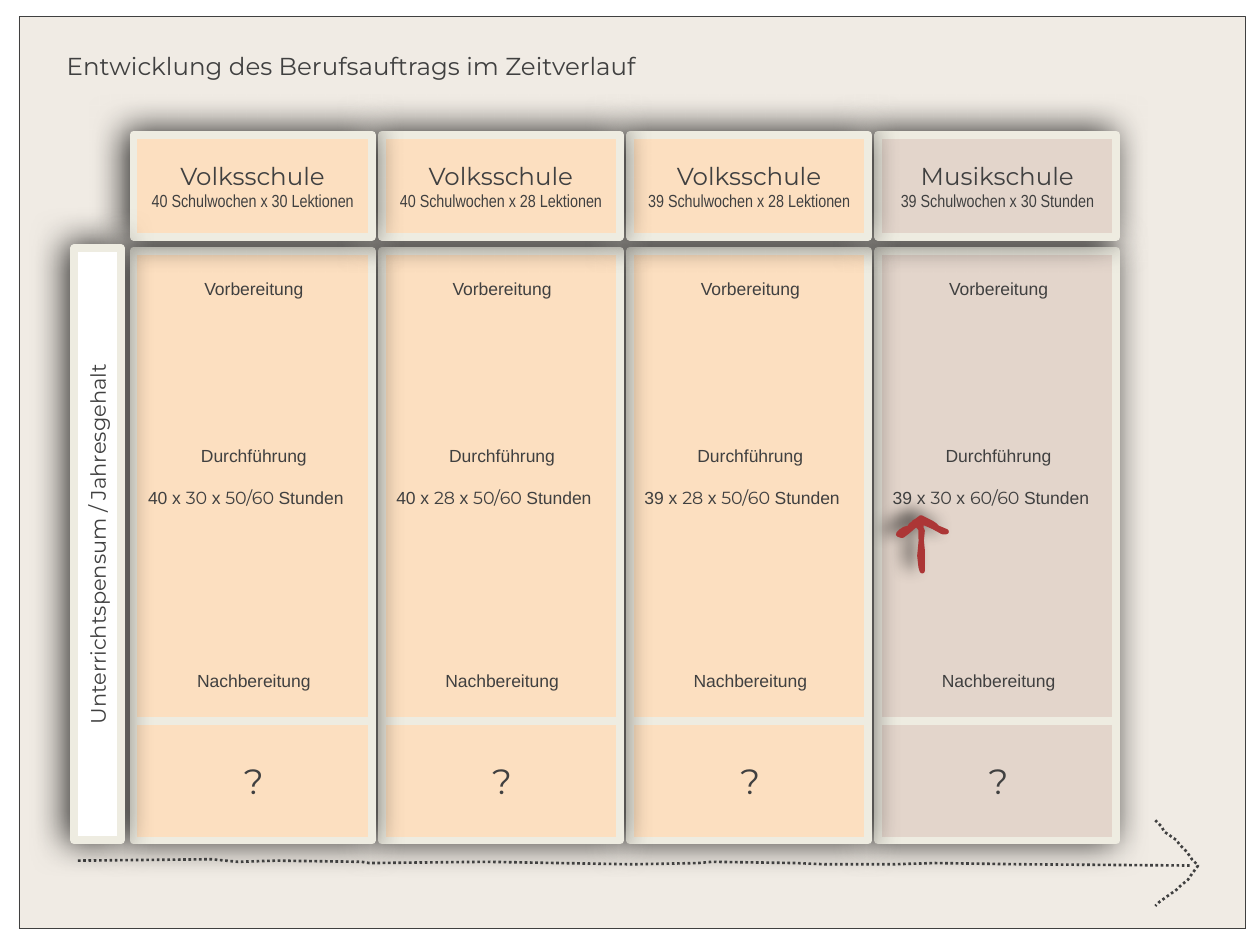
"""Build the slide on how the teaching assignment has developed over time."""
import pptx
import pptx.util
import pptx.dml.color
import pptx.enum.dml
import pptx.enum.shapes
import pptx.enum.text
import pptx.oxml
import pptx.oxml.ns

Pt = pptx.util.Pt
RGBColor = pptx.dml.color.RGBColor
ALIGN = pptx.enum.text.PP_ALIGN
DOTTED = pptx.enum.dml.MSO_LINE.ROUND_DOT
RECTANGLE = pptx.enum.shapes.MSO_SHAPE.RECTANGLE

INK = RGBColor(0x40, 0x40, 0x40)
PAPER = RGBColor(0xF0, 0xEB, 0xE4)
EDGE = RGBColor(0xEE, 0xEC, 0xE1)
PEACH = RGBColor(0xFC, 0xDF, 0xC0)
MAUVE = RGBColor(0xE3, 0xD5, 0xCB)
WHITE = RGBColor(0xFF, 0xFF, 0xFF)
RED = RGBColor(0xAC, 0x36, 0x36)


def style(shape, fill, line, dash=None, shadow=None):
    if fill is None:
        shape.fill.background()
    else:
        shape.fill.solid()
        shape.fill.fore_color.rgb = fill
    shape.line.color.rgb, width = line
    shape.line.width = Pt(width)
    if dash is not None:
        shape.line.dash_style = dash
    shape.shadow.inherit = False
    if shadow:
        blur, distance = shadow
        effects = shape._element.spPr.find(pptx.oxml.ns.qn("a:effectLst"))
        effects.append(pptx.oxml.parse_xml(
            f'<a:outerShdw {pptx.oxml.ns.nsdecls("a")} blurRad="{Pt(blur)}" '
            f'dist="{Pt(distance)}" dir="12000000" algn="ctr" rotWithShape="0">'
            '<a:srgbClr val="000000"><a:alpha val="80000"/></a:srgbClr></a:outerShdw>'))


def write(box, paragraphs, frame_format):
    frame = box.text_frame
    for name, value in {"word_wrap": True, **frame_format}.items():
        setattr(frame, name, value)
    for index, (para_format, spans) in enumerate(paragraphs):
        para = frame.add_paragraph() if index else frame.paragraphs[0]
        for name, value in para_format.items():
            setattr(para, name, value)
        for text, font, size in spans:
            span = para.add_run()
            span.text = text
            for name, value in {"name": font, "size": Pt(size)}.items():
                setattr(span.font, name, value)
            span.font.color.rgb = INK


CENTRED = {"alignment": ALIGN.CENTER}
LEFT = {"alignment": ALIGN.LEFT}
MIDDLE = {"vertical_anchor": pptx.enum.text.MSO_ANCHOR.MIDDLE}
GROW = {"auto_size": pptx.enum.text.MSO_AUTO_SIZE.SHAPE_TO_FIT_TEXT}
FRAME = (EDGE, 4.5)
SOFT = (20, 4)

deck = pptx.Presentation()
deck.slide_width, deck.slide_height = Pt(720), Pt(540)
page = deck.slides.add_slide(deck.slide_layouts[6])
shapes = page.shapes

backdrop = shapes.add_shape(RECTANGLE, Pt(10.8), Pt(9.4), Pt(700.6), Pt(521.3))
style(backdrop, PAPER, (INK, 0.25), DOTTED)

# school, weeks, lessons, unit, minutes, fill
columns = [
    ("Volksschule", 40, 30, "Lektionen", "50/60", PEACH),
    ("Volksschule", 40, 28, "Lektionen", "50/60", PEACH),
    ("Volksschule", 39, 28, "Lektionen", "50/60", PEACH),
    ("Musikschule", 39, 30, "Stunden", "60/60", MAUVE),
]
FIRST_LEFT, PITCH, WIDTH = 76.3, 141.85, 136.1
placed = [(FIRST_LEFT + PITCH * index, column) for index, column in enumerate(columns)]
placed.reverse()

for left, (school, weeks, lessons, unit, minutes, fill) in placed:
    body = shapes.add_shape(RECTANGLE, Pt(left), Pt(143.3), Pt(WIDTH), Pt(337))
    style(body, fill, FRAME, shadow=SOFT)
    formula = [(f"{weeks} x ", "Arial", 10), (f"{lessons} ", "Montserrat", 10),
               ("x ", "Arial", 10), (f"{minutes} ", "Montserrat", 10),
               ("Stunden", "Arial", 10)]
    labels = [
        (250.6, 43.9, [(CENTRED, [("Durchführung", "Arial", 10)]),
                       ({**LEFT, "space_before": Pt(12)}, formula)]),
        (430.6, 31.7, [(CENTRED, [("?", "Montserrat", 20)])]),
        (155.5, 19.4, [(CENTRED, [("Vorbereitung", "Arial", 10)])]),
        (379.4, 19.4, [(CENTRED, [("Nachbereitung", "Arial", 10)])]),
    ]
    for top, height, paragraphs in labels:
        box = shapes.add_textbox(Pt(left + 1.2), Pt(top), Pt(135), Pt(height))
        write(box, paragraphs, GROW)
    divider = shapes.add_connector(pptx.enum.shapes.MSO_CONNECTOR.STRAIGHT,
                                   Pt(left), Pt(411.8), Pt(left + WIDTH), Pt(411.8))
    divider.line.color.rgb = EDGE
    divider.line.width = Pt(4.5)
    divider._element.spPr.append(
        pptx.oxml.parse_xml(f'<a:effectLst {pptx.oxml.ns.nsdecls("a")}/>'))

for left, (school, weeks, lessons, unit, minutes, fill) in placed:
    header = shapes.add_shape(RECTANGLE, Pt(left), Pt(77), Pt(WIDTH), Pt(58.3))
    style(header, fill, FRAME, shadow=SOFT)
    write(header, [
        (CENTRED, [(school, "Montserrat", 14)]),
        (CENTRED, [(f"{weeks} Schulwochen x {lessons} {unit}", "Arial Narrow", 10)]),
    ], MIDDLE)

marker = [
    (527, 326.2), (527, 314.6), (526.3, 307.4), (526.3, 295.9), (520.6, 300.2),
    (519.8, 301.7), (517, 302.4), (514.8, 303.8), (513.4, 305.3), (515.5, 306),
    (518.4, 303.8), (523.4, 299.5), (525.6, 298.1), (526.3, 295.9), (529.2, 297.4),
    (532.1, 298.8), (534.2, 300.2), (535.7, 301.7), (540.7, 303.8), (538.6, 303.8),
    (533.5, 301), (528.5, 298.8), (522.7, 298.1), (527, 303.1), (525.6, 317.5),
    (526.3, 324),
]
time_head = [
    (660.2, 468.7), (663.8, 472.3), (665.3, 475.2), (672.5, 480.2), (673.9, 482.4),
    (678.2, 486.7), (681.1, 491), (684.7, 494.6), (680.4, 500.4), (679, 502.6),
    (674.6, 506.2), (672.5, 508.3), (667.4, 511.9), (662.4, 515.5), (660.2, 517.7),
]
time_line = [
    (44.6, 491.8), (121, 491), (128.9, 491.8), (136.1, 492.5), (157.7, 491.8),
    (206.6, 492.5), (211, 493.2), (277.9, 492.5), (361.4, 493.9), (398.9, 493.2),
    (406.8, 492.5), (455, 493.2), (471.6, 493.9), (509.8, 493.9), (534.2, 493.2),
    (584.6, 493.9), (681.1, 494.6),
]
strokes = [
    (marker, True, (RED, 3), None, (10, 7)),
    (time_head, False, (INK, 1.5), DOTTED, None),
    (time_line, False, (INK, 1.5), DOTTED, None),
]
for points, closed, line, dash, shadow in strokes:
    corners = [(Pt(x), Pt(y)) for x, y in points]
    builder = shapes.build_freeform(*corners[0])
    builder.add_line_segments(corners[1:], close=closed)
    style(builder.convert_to_shape(), None, line, dash, shadow)

side = shapes.add_shape(RECTANGLE, Pt(42.5), Pt(141.8), Pt(26.6), Pt(338.4))
style(side, WHITE, FRAME, shadow=SOFT)
write(side, [(CENTRED, [("Unterrichtspensum / Jahresgehalt", "Montserrat", 12)])], MIDDLE)
side.text_frame._txBody.bodyPr.set("vert", "vert270")

title = shapes.add_textbox(Pt(31), Pt(25.9), Pt(623.5), Pt(24.5))
write(title, [(LEFT, [("Entwicklung des Berufsauftrags im Zeitverlauf", "Montserrat", 14)])], GROW)

deck.save("out.pptx")
